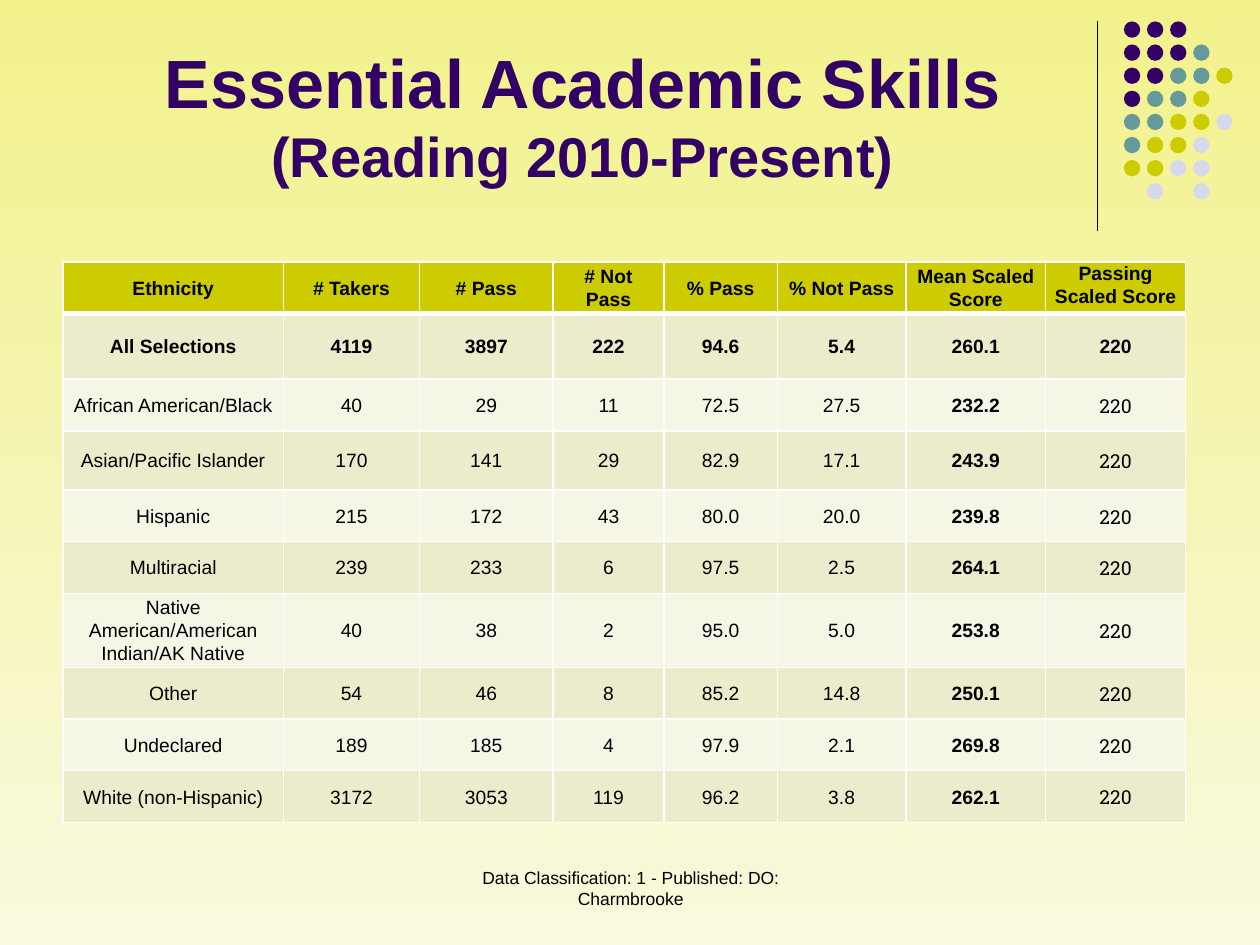
from dataclasses import dataclass

from lxml import etree
from pptx import Presentation
from pptx.dml.color import RGBColor
from pptx.enum import shapes, text
from pptx.oxml import ns
from pptx.util import Inches, Pt


@dataclass(frozen=True)
class Theme:
    purple: str = "330066"
    teal: str = "669999"
    olive: str = "CCCC00"
    lilac: str = "D8D8EC"
    black: str = "000000"
    white: str = "FFFFFF"
    band_dark: str = "ECECCC"
    band_light: str = "F6F6E7"
    sky_top: str = "F2F28C"
    sky_bottom: str = "F9F9DE"
    font: str = "Arial"
    score_font: str = "Roboto Slab"
    title_size: float = 39
    subtitle_size: float = 32
    table_size: float = 11
    footer_size: float = 10


@dataclass(frozen=True)
class Box:
    left: float
    top: float
    width: float
    height: float

    def emu(self) -> tuple:
        return tuple(map(Inches, (self.left, self.top, self.width, self.height)))


@dataclass(frozen=True)
class ScoreRow:
    ethnicity: str
    takers: str
    passed: str
    not_passed: str
    pass_rate: str
    fail_rate: str
    mean_score: str
    height: float = 0.41
    passing_score: str = "220"

    def values(self) -> tuple:
        return (self.ethnicity, self.takers, self.passed, self.not_passed,
                self.pass_rate, self.fail_rate, self.mean_score, self.passing_score)


THEME = Theme()
TITLE_BOX = Box(0.5, 0.13, 8.25, 1.42)
FOOTER_BOX = Box(3.42, 6.83, 3.17, 0.5)
TABLE_LEFT, TABLE_TOP = 0.5, 2.08
COLUMN_WIDTHS = (1.75, 1.08, 1.06, 0.88, 0.9, 1.02, 1.11, 1.11)
HEADER_HEIGHT = 0.41
HEADINGS = ("Ethnicity", "# Takers", "# Pass", "# Not Pass", "% Pass",
            "% Not Pass", "Mean Scaled Score", "Passing Scaled Score")
MEAN_COLUMN, PASSING_COLUMN = 6, 7
SCORES = (
    ScoreRow("All Selections", "4119", "3897", "222", "94.6", "5.4", "260.1", 0.52),
    ScoreRow("African American/Black", "40", "29", "11", "72.5", "27.5", "232.2"),
    ScoreRow("Asian/Pacific Islander", "170", "141", "29", "82.9", "17.1", "243.9", 0.47),
    ScoreRow("Hispanic", "215", "172", "43", "80.0", "20.0", "239.8"),
    ScoreRow("Multiracial", "239", "233", "6", "97.5", "2.5", "264.1"),
    ScoreRow("Native American/American Indian/AK Native",
             "40", "38", "2", "95.0", "5.0", "253.8", 0.54),
    ScoreRow("Other", "54", "46", "8", "85.2", "14.8", "250.1"),
    ScoreRow("Undeclared", "189", "185", "4", "97.9", "2.1", "269.8"),
    ScoreRow("White (non-Hispanic)", "3172", "3053", "119", "96.2", "3.8", "262.1"),
)
# One letter per dot: purple, teal, olive, lilac; a point is a gap
DOT_ROWS = ("PPP", "PPPT", "PPTTO", "PTTO", "TTOOL", "TOOL", "OOLL", ".L.L")
DOT_COLORS = {"P": THEME.purple, "T": THEME.teal, "O": THEME.olive, "L": THEME.lilac}
DOT_LEFT, DOT_TOP, DOT_SIZE, DOT_PITCH = 8.92, 0.17, 0.13, 1.1 / 6


def style_run(run, size: float, color: str = THEME.black, bold: bool = False,
              font: str = THEME.font) -> None:
    run.font.name = font
    run.font.size = Pt(size)
    run.font.bold = bold
    run.font.color.rgb = RGBColor.from_string(color)


def draw_background(slide) -> None:
    fill = slide.background.fill
    fill.gradient()
    fill.gradient_angle = 270
    for stop, color in zip(fill.gradient_stops, (THEME.sky_top, THEME.sky_bottom)):
        stop.color.rgb = RGBColor.from_string(color)
    fill.gradient_stops[0].position = 0
    fill.gradient_stops[1].position = 1


def draw_divider(slide) -> None:
    divider = slide.shapes.add_connector(
        shapes.MSO_CONNECTOR.STRAIGHT,
        Inches(8.71), Inches(0.17), Inches(8.71), Inches(1.83))
    divider.line.color.rgb = RGBColor.from_string(THEME.black)
    divider.line.width = Pt(0.75)
    etree.SubElement(divider.element.spPr, ns.qn("a:effectLst"))


def draw_dots(slide) -> None:
    dots = slide.shapes.add_group_shape().shapes
    for row, pattern in enumerate(DOT_ROWS):
        for column, key in enumerate(pattern):
            if key not in DOT_COLORS:
                continue
            place = Box(DOT_LEFT + column * DOT_PITCH, DOT_TOP + row * DOT_PITCH,
                        DOT_SIZE, DOT_SIZE)
            dot = dots.add_shape(shapes.MSO_SHAPE.OVAL, *place.emu())
            dot.shadow.inherit = False
            dot.fill.solid()
            dot.fill.fore_color.rgb = RGBColor.from_string(DOT_COLORS[key])
            dot.line.fill.background()


def draw_title(slide) -> None:
    title = slide.shapes.title
    title.left, title.top, title.width, title.height = TITLE_BOX.emu()
    frame = title.text_frame
    frame.text = "Essential Academic Skills "
    frame.word_wrap = True
    frame.auto_size = text.MSO_AUTO_SIZE.NONE
    frame.vertical_anchor = text.MSO_ANCHOR.BOTTOM
    heading = frame.paragraphs[0]
    heading.alignment = text.PP_ALIGN.CENTER
    heading.line_spacing = 1.0
    heading.space_before = Pt(0)
    heading.add_run().text = "(Reading 2010-Present)"
    for run, size in zip(heading.runs, (THEME.title_size, THEME.subtitle_size)):
        style_run(run, size, THEME.purple, bold=True)


def set_borders(cell, top: float, bottom: float) -> None:
    properties = cell._tc.get_or_add_tcPr()
    for side, width in (("L", 1), ("R", 1), ("T", top), ("B", bottom)):
        edge = etree.SubElement(properties, ns.qn(f"a:ln{side}"), w=str(Pt(width)))
        paint = etree.SubElement(edge, ns.qn("a:solidFill"))
        etree.SubElement(paint, ns.qn("a:srgbClr"), val=THEME.white)


def fill_cell(cell, value: str, row: int, column: int) -> None:
    set_borders(cell, top=3 if row == 1 else 1, bottom=3 if row == 0 else 1)
    band = THEME.band_dark if row % 2 else THEME.band_light
    cell.fill.solid()
    cell.fill.fore_color.rgb = RGBColor.from_string(band if row else THEME.olive)
    cell.margin_left = cell.margin_right = Inches(0.07)
    cell.margin_top = cell.margin_bottom = 0
    top_heading = row == 0 and column == PASSING_COLUMN
    cell.vertical_anchor = text.MSO_ANCHOR.TOP if top_heading else text.MSO_ANCHOR.MIDDLE
    cell.text_frame.text = value
    entry = cell.text_frame.paragraphs[0]
    entry.alignment = text.PP_ALIGN.CENTER
    entry.line_spacing = 1.07
    slab = row > 1 and column == PASSING_COLUMN
    style_run(entry.runs[0], THEME.table_size, bold=row < 2 or column == MEAN_COLUMN,
              font=THEME.score_font if slab else THEME.font)


def draw_scores(slide) -> None:
    rows = (HEADINGS, *(score.values() for score in SCORES))
    heights = (HEADER_HEIGHT, *(score.height for score in SCORES))
    place = Box(TABLE_LEFT, TABLE_TOP, sum(COLUMN_WIDTHS), sum(heights))
    scores = slide.shapes.add_table(len(rows), len(HEADINGS), *place.emu()).table
    for column, width in zip(scores.columns, COLUMN_WIDTHS):
        column.width = Inches(width)
    for row, (values, height) in enumerate(zip(rows, heights)):
        scores.rows[row].height = Inches(height)
        for column, value in enumerate(values):
            fill_cell(scores.cell(row, column), value, row, column)


def draw_footer(slide) -> None:
    frame = slide.shapes.add_textbox(*FOOTER_BOX.emu()).text_frame
    frame.word_wrap = True
    frame.text = "Data Classification: 1 - Published: DO: Charmbrooke"
    frame.paragraphs[0].alignment = text.PP_ALIGN.CENTER
    style_run(frame.paragraphs[0].runs[0], THEME.footer_size)


def main() -> None:
    deck = Presentation()
    deck.slide_width, deck.slide_height = Inches(10), Inches(7.5)
    slide = deck.slides.add_slide(deck.slide_layouts[5])
    for draw in (draw_background, draw_divider, draw_dots,
                 draw_title, draw_footer, draw_scores):
        draw(slide)
    deck.save("out.pptx")


if __name__ == "__main__":
    main()
